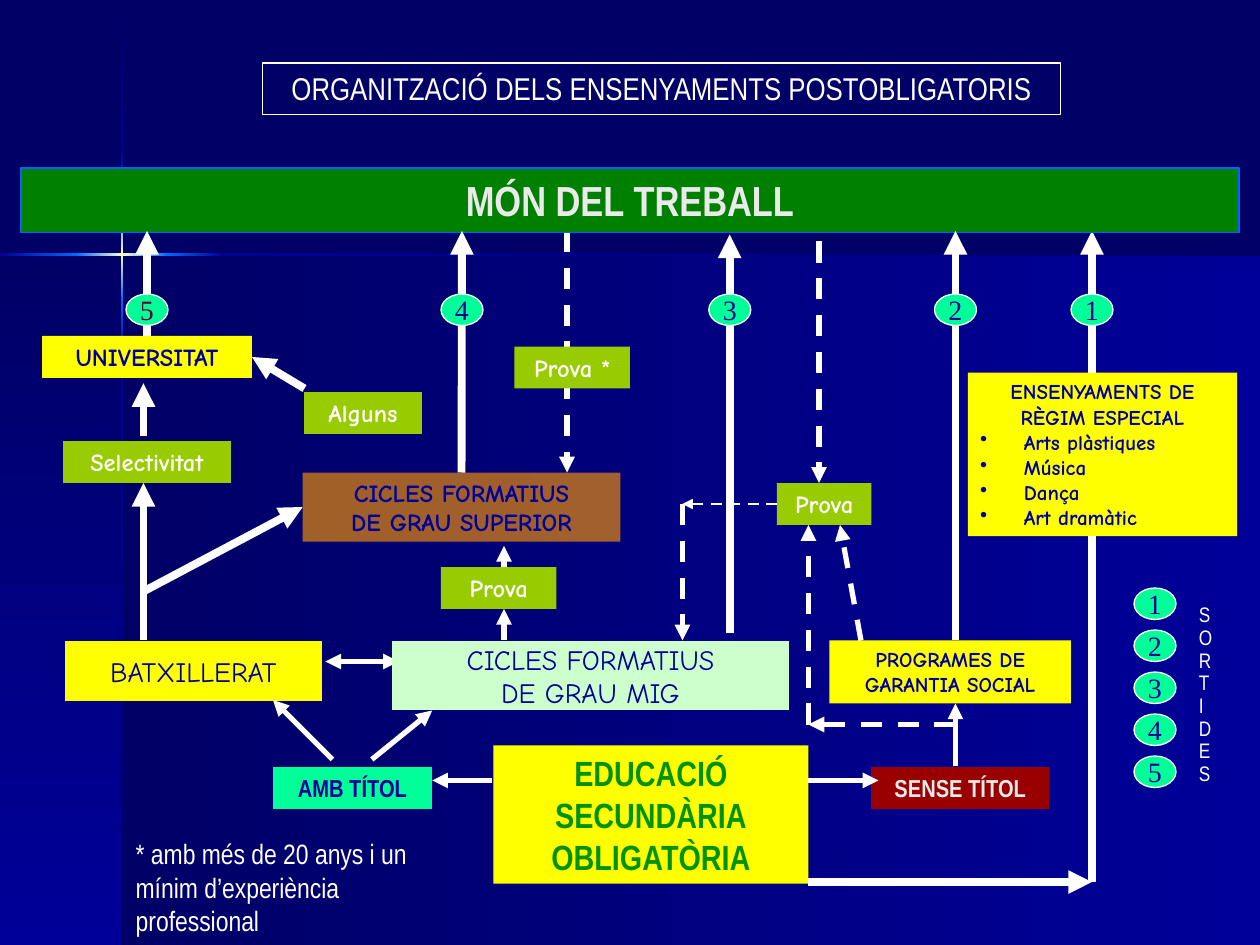
from lxml import etree
from pptx import Presentation
from pptx.dml.color import RGBColor as RGB
from pptx.enum.dml import MSO_LINE
from pptx.enum.shapes import MSO_CONNECTOR, MSO_SHAPE as SHAPE
from pptx.enum.text import MSO_ANCHOR as ANCHOR, PP_ALIGN as ALIGN
from pptx.oxml.ns import qn
from pptx.util import Pt

C = {"night": "000066", "navy": "000099", "glow": "0066FF", "spark": "FFFFCC",
     "white": "FFFFFF", "pale": "EAEAEA", "green": "008000", "leaf": "009200",
     "yellow": "FFFF00", "mint": "00FF99", "red": "990000", "lime": "99CC00",
     "orange": "FF9900", "light": "CCFFCC", "wine": "660033"}
NARROW, COMIC, TIMES = "Arial Narrow", "Comic Neue", "Times New Roman"

prs = Presentation()
prs.slide_width, prs.slide_height = Pt(720), Pt(540)
s = prs.slides.add_slide(prs.slide_layouts[6])
s.background.fill.solid()
s.background.fill.fore_color.rgb = RGB.from_string(C["night"])


def add_box(kind, place, fill, line, lines, font, size, color, bold=False,
            anchor=ANCHOR.TOP, wrap=True):
    sp = s.shapes.add_shape(kind, *[Pt(v) for v in place])
    sp.shadow.inherit = False
    if fill:
        sp.fill.solid()
        sp.fill.fore_color.rgb = RGB.from_string(C[fill])
    else:
        sp.fill.background()
    if line:
        sp.line.color.rgb = RGB.from_string(C[line])
        sp.line.width = Pt(0.75)
    else:
        sp.line.fill.background()
    tf = sp.text_frame
    tf.word_wrap, tf.vertical_anchor = wrap, anchor
    for i, text in enumerate(lines):
        p = tf.paragraphs[0] if i == 0 else tf.add_paragraph()
        p.alignment = ALIGN.CENTER
        r = p.add_run()
        r.text = text
        r.font.name, r.font.size, r.font.bold = font, Pt(size), bold
        r.font.color.rgb = RGB.from_string(C[color])
    return sp


def add_arrow(start, end, width=3, dashed=False, double=False):
    cn = s.shapes.add_connector(MSO_CONNECTOR.STRAIGHT, *[Pt(v) for v in start + end])
    cn.line.color.rgb = RGB.from_string(C["white"])
    cn.line.width = Pt(width)
    if dashed:
        cn.line.dash_style = MSO_LINE.DASH
    ln = cn.line._get_or_add_ln()
    for tag in ["a:headEnd", "a:tailEnd"] if double else ["a:tailEnd"]:
        etree.SubElement(ln, qn(tag)).set("type", "triangle")
    etree.SubElement(cn._element.spPr, qn("a:effectLst"))
    return cn


# Background panels and the glowing cross: place, first colour, last colour, vertical
panels = [((70, 145, 650, 395), "night", "navy", False),
          ((0, 145, 70, 395), "night", "navy", True)]
down = [(1, "night"), (87, "navy"), (119, "glow"), (145, "spark"), (171, "glow"),
        (203, "navy"), (540, "night")]
across = [(0, "navy"), (43.5, "glow"), (70, "spark"), (96, "glow"), (127.5, "navy"),
          (720, "night")]
for (a, first), (b, last) in zip(down, down[1:]):
    panels.append(((69.2, a, 1.4, b - a), first, last, True))
for (a, first), (b, last) in zip(across, across[1:]):
    panels.append(((a, 144.8, b - a, 1.4), first, last, False))
for place, first, last, vertical in panels:
    sp = s.shapes.add_shape(SHAPE.RECTANGLE, *[Pt(v) for v in place])
    sp.shadow.inherit = False
    sp.line.fill.background()
    sp.fill.gradient()
    sp.fill.gradient_angle = 270 if vertical else 0
    for stop, name in zip(sp.fill.gradient_stops, (first, last)):
        stop.color.rgb = RGB.from_string(C[name])

# Arrows that pass behind boxes
add_arrow((186, 378), (228, 378), double=True)
add_arrow((324, 132), (324, 270), dashed=True)
add_arrow((624, 504), (624, 132), 4.5)

# Boxes
RECT, BUTTON = SHAPE.RECTANGLE, SHAPE.ACTION_BUTTON_CUSTOM
add_box(RECT, (150, 36, 456, 29.5), None, "white",
        ["ORGANITZACIÓ DELS ENSENYAMENTS POSTOBLIGATORIS"], NARROW, 18, "white")
add_box(RECT, (12, 96, 696, 36.75), "green", "glow", ["MÓN DEL TREBALL"],
        NARROW, 24, "pale", True)
add_box(RECT, (282, 426, 180, 79), "yellow", None,
        ["EDUCACIÓ", "SECUNDÀRIA", "OBLIGATÒRIA"], NARROW, 20, "leaf", True)
add_box(SHAPE.LINE_CALLOUT_1, (156, 438, 91, 24), "mint", None, ["AMB TÍTOL"],
        NARROW, 14, "navy", True)
add_box(SHAPE.LINE_CALLOUT_1, (498, 438, 101.5, 24), "red", None, ["SENSE TÍTOL"],
        NARROW, 14, "pale", True)
university = add_box(RECT, (24, 192, 120, 24), "yellow", None, ["UNIVERSITAT"],
                     COMIC, 14, "navy", True)
for kind, x, y, w, text in [(RECT, 36, 252, 96, "Selectivitat"),
                            (RECT, 252, 324, 66, "Prova"),
                            (RECT, 294, 198, 66, "Prova *"),
                            (SHAPE.LINE_CALLOUT_2, 174, 224, 67, "Alguns"),
                            (RECT, 444, 276, 54, "Prova")]:
    test = add_box(kind, (x, y, w, 24), "lime", None, [text], COMIC, 14, "white", True)
add_box(RECT, (474, 366, 138, 36), "yellow", None, ["PROGRAMES DE GARANTIA SOCIAL"],
        COMIC, 12, "navy", True)
special = add_box(RECT, (553, 213, 154, 93.5), "yellow", None,
                  ["ENSENYAMENTS DE RÈGIM ESPECIAL", "Arts plàstiques", "Música", "Dança",
                   "Art dramàtic"], COMIC, 12, "navy", True)
for p in special.text_frame.paragraphs[1:]:
    p.alignment = ALIGN.LEFT
    pPr = p._p.get_or_add_pPr()
    pPr.set("marL", str(Pt(25)))
    pPr.set("indent", str(-Pt(25)))
    etree.SubElement(pPr, qn("a:buChar")).set("char", "•")
add_box(BUTTON, (37, 366.5, 147, 34), "yellow", None, ["BATXILLERAT"], COMIC, 16, "navy",
        anchor=ANCHOR.MIDDLE, wrap=False)
add_box(BUTTON, (224, 366.5, 227, 39.5), "light", None,
        ["CICLES FORMATIUS", "DE GRAU MIG"], COMIC, 16, "navy",
        anchor=ANCHOR.MIDDLE, wrap=False)
higher = add_box(BUTTON, (173, 270, 181.5, 39.5), "orange", None,
                 ["CICLES FORMATIUS", "DE GRAU SUPERIOR"], COMIC, 14, "navy", True,
                 anchor=ANCHOR.MIDDLE, wrap=False)
tint = higher._element.spPr.find(qn("a:solidFill"))[0]
etree.SubElement(tint, qn("a:alpha")).set("val", "63000")

# Solid arrows
for start, end in [((82, 366), (82, 276)), ((82, 249), (82, 219)),
                   ((417, 362), (417, 134)), ((546, 366), (546, 132)),
                   ((462, 504), (624, 504))]:
    add_arrow(start, end, 4.5)
for start, end in [((288, 366), (288, 348)), ((288, 324), (288, 312)),
                   ((546, 438), (546, 402)), ((190, 434), (156, 400)),
                   ((281, 446), (247, 446)), ((462, 446), (502, 446)),
                   ((212.5, 434), (247, 406))]:
    add_arrow(start, end)
add_arrow((84, 192), (84, 132), 4.5).begin_connect(university, 0)
add_arrow((174, 222), (144, 204), 4.5).end_connect(university, 3)
add_arrow((264, 270), (264, 132), 4.5).begin_connect(higher, 0)
add_arrow((82, 338), (173, 288), 4.5).end_connect(higher, 1)

# Dashed arrows
for start, end in [((468, 138), (468, 276)), ((492, 366), (480, 300)),
                   ((546, 414), (462, 414)), ((462, 414), (462, 300)),
                   ((390, 288), (390, 366))]:
    add_arrow(start, end, dashed=True)
add_arrow((444, 288), (390, 288), 1.5, dashed=True).begin_connect(test, 1)

# Numbered exits: on the arrows, then in the key
circles = [(72, 168, 5), (252, 168, 4), (405, 168, 3), (534, 168, 2), (612, 168, 1)]
circles += [(648, 336 + 24 * i, i + 1) for i in range(5)]
for x, y, number in circles:
    add_box(SHAPE.OVAL, (x, y, 24, 18), "mint", "white", [str(number)], TIMES, 16,
            "wine" if x == 72 else "navy", anchor=ANCHOR.MIDDLE, wrap=False)

# Plain texts
for place, lines, size, spacing in [
        ((70.5, 474.5, 200, 65), ["* amb més de 20 anys i un mínim d’experiència professional"],
         16, 1),
        ((678, 342, 24, 111.5), "SORTIDES", 12, 0.9)]:
    tf = s.shapes.add_textbox(*[Pt(v) for v in place]).text_frame
    tf.word_wrap = True
    for i, text in enumerate(lines):
        p = tf.paragraphs[0] if i == 0 else tf.add_paragraph()
        p.line_spacing = spacing
        r = p.add_run()
        r.text = text
        r.font.name, r.font.size = NARROW, Pt(size)
        r.font.color.rgb = RGB.from_string(C["white"])

prs.save("out.pptx")
